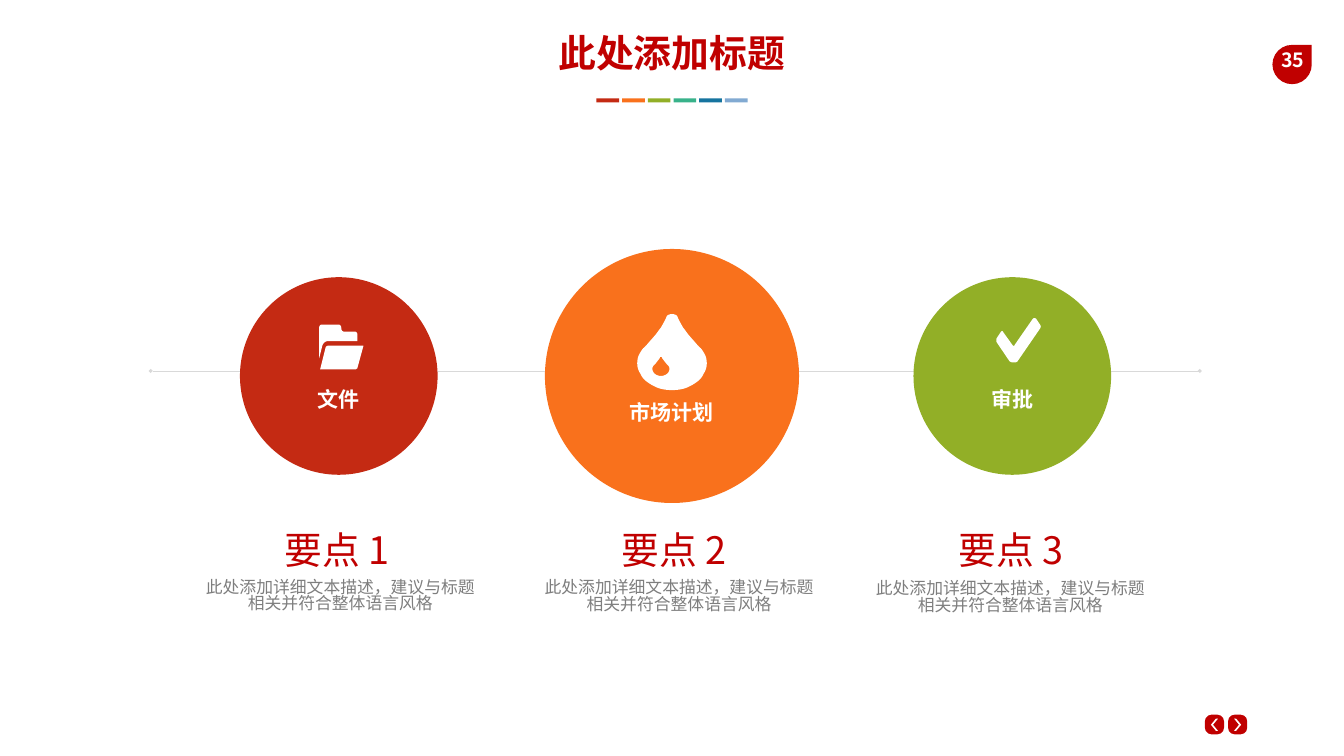
from pptx import Presentation
from pptx.dml.color import RGBColor as RGB
from pptx.enum.dml import MSO_LINE
from pptx.enum.shapes import MSO_CONNECTOR as Link, MSO_SHAPE as Shape
from pptx.enum.text import MSO_ANCHOR as Anchor, PP_ALIGN as Align
from pptx.oxml.ns import qn
from pptx.util import Inches, Pt
from lxml.etree import SubElement

FONT = "Noto Sans CJK SC"
RED, WHITE = RGB(0xC0, 0, 0), RGB(0xFF, 0xFF, 0xFF)
GREY, PALE = RGB(0x7E, 0x7E, 0x7E), RGB(0xD9, 0xD9, 0xD9)
BRICK, ORANGE, GREEN = RGB(0xC4, 0x2A, 0x13), RGB(0xF9, 0x71, 0x1C), RGB(0x92, 0xAF, 0x27)
TEAL, BLUE, SKY = RGB(0x38, 0xB2, 0x8A), RGB(0x16, 0x74, 0x9F), RGB(0x82, 0xAA, 0xD2)
STRIPES = [BRICK, ORANGE, GREEN, TEAL, BLUE, SKY]

WIDE, HIGH = 26.66, 15
MID = 7.46  # centre height of the circles
NOTE = "此处添加详细文本描述，建议与标题相关并符合整体语言风格"

# Icon outlines in inches: a start, then lines (2 numbers) and curves (6)
FOLDER = [
    [(.17, .33), (.14, .33, .12, .34, .10, .36), (.08, .38, .07, .40, .06, .43),
     (0, .67), (0, .07), (0, .03, .02, 0, .05, 0), (.38, 0),
     (.42, 0, .44, .03, .44, .07), (.44, .11, .46, .14, .50, .14), (.71, .14),
     (.74, .14, .76, .17, .76, .20), (.76, .33)],
    [(.88, .42), (.76, .86), (.76, .87, .73, .89, .72, .89), (.02, .89),
     (.13, .45), (.14, .43, .16, .42, .17, .42)],
]
CHECK = [
    [(.33, .88), (.30, .88, .28, .87, .26, .85), (.01, .48),
     (0, .46, 0, .42, .01, .40), (.09, .28), (.11, .25, .13, .25, .14, .28),
     (.32, .53), (.34, .56, .36, .56, .37, .53), (.73, .01),
     (.75, 0, .77, 0, .79, .01), (.87, .13), (.89, .16, .89, .18, .87, .21),
     (.43, .85), (.42, .87, .40, .88, .37, .88)],
]
# Right halves of the drop and its hole, mirrored when drawn
DROP = [(0, 0), (.03, 0, .11, .02, .11, .06), (.14, .13, .18, .20, .22, .27),
        (.27, .33, .31, .40, .36, .45), (.41, .51, .45, .55, .49, .60),
        (.53, .64, .56, .67, .58, .69), (.61, .73, .64, .78, .66, .82),
        (.68, .87, .69, .92, .69, .98), (.69, 1.05, .67, 1.12, .63, 1.18),
        (.60, 1.25, .55, 1.31, .49, 1.35), (.42, 1.40, .35, 1.44, .27, 1.47),
        (.18, 1.50, .10, 1.51, 0, 1.51)]
HOLE = [(0, .85), (.02, .85, .02, .85, .02, .87), (.04, .90, .08, .95, .12, 1),
        (.16, 1.03, .17, 1.06, .17, 1.09), (.17, 1.17, .09, 1.23, 0, 1.23)]

# Circle: label, fill, centre, size, label drop; then heading and note centres
POINTS = [
    ("文件", BRICK, 6.72, 3.92, .5, "要点 1", 6.68, 6.75, 11.38),
    ("市场计划", ORANGE, 13.33, 5.04, .75, "要点 2", 13.37, 13.47, 11.39),
    ("审批", GREEN, 20.08, 3.92, .5, "要点 3", 20.05, 20.04, 11.41),
]

deck = Presentation()
deck.slide_width, deck.slide_height = Inches(WIDE), Inches(HIGH)
slide = deck.slides.add_slide(deck.slide_layouts[6])
shapes = slide.shapes


def paint(item, fill):
    item.shadow.inherit = False
    item.fill.solid()
    item.fill.fore_color.rgb = fill
    item.line.fill.background()
    return item


def block(kind, x, y, w, h, fill, home=shapes):
    return paint(home.add_shape(kind, *map(Inches, (x, y, w, h))), fill)


def write(item, text, size, color, bold=False, pad=(.1, .05), gap=.9,
          anchor=Anchor.TOP, wrap=True):
    frame = item.text_frame
    frame.word_wrap, frame.vertical_anchor = wrap, anchor
    frame.margin_left = frame.margin_right = Inches(pad[0])
    frame.margin_top = frame.margin_bottom = Inches(pad[1])
    para = frame.paragraphs[0]
    para.alignment, para.line_spacing = Align.CENTER, gap
    run = para.add_run()
    run.text = text
    font = run.font
    font.size, font.bold, font.name = Pt(size), bold, FONT
    font.color.rgb = color
    SubElement(run._r.get_or_add_rPr(), qn("a:ea")).set("typeface", FONT)
    return frame


def label(x, y, w, h, *args, **opts):
    write(shapes.add_textbox(*map(Inches, (x, y, w, h))), *args, **opts)


def trace(outline, steps=6):
    """Turn lines and curves into a list of points."""
    dots = [outline[0]]
    for part in outline[1:]:
        if len(part) == 2:
            dots.append(part)
            continue
        ends = [dots[-1], part[:2], part[2:4], part[4:]]
        for n in range(1, steps + 1):
            t = n / steps
            u = 1 - t
            mix = (u ** 3, 3 * u * u * t, 3 * u * t * t, t ** 3)
            dots.append(tuple(sum(m * e[k] for m, e in zip(mix, ends)) for k in (0, 1)))
    return dots


def mirror(half, x):
    dots = trace(half)
    return [(x + a, b) for a, b in dots] + [(x - a, b) for a, b in dots[::-1]]


def icon(x, y, rings):
    rings = [[(Inches(x + a), Inches(y + b)) for a, b in ring] for ring in rings]
    pen = shapes.build_freeform(*rings[0][0])
    for n, ring in enumerate(rings):
        if n:
            pen.move_to(*ring[0])
        pen.add_line_segments(ring[1:], close=True)
    paint(pen.convert_to_shape(), WHITE)


# Page buttons
for x, turn in ((23.9, 180), (24.36, 0)):
    block(Shape.ROUNDED_RECTANGLE, x, 14.18, .38, .39, RED).adjustments[0] = .35
    arrow = block(Shape.CHEVRON, x + .12, 14.26, .14, .24, WHITE)
    arrow.adjustments[0], arrow.rotation = .7, turn

# Page number
block(Shape.TEAR, 25.24, .89, .78, .78, RED)
label(25.16, .9, .97, .67, "35", 28, WHITE, bold=True, pad=(.2, .1), wrap=False)

# Line behind the circles
axis = shapes.add_connector(Link.STRAIGHT, *map(Inches, (2.99, 7.36, 23.8, 7.36)))
axis.line.color.rgb, axis.line.width = PALE, Pt(.5)
axis.line.dash_style = MSO_LINE.ROUND_DOT
for end in ("a:headEnd", "a:tailEnd"):
    SubElement(axis.line._get_or_add_ln(), qn(end)).set("type", "diamond")
SubElement(axis._element.spPr, qn("a:effectLst"))

# Circles, headings and notes
for name, fill, x, size, drop, head, head_x, note_x, note_y in POINTS:
    disc = block(Shape.OVAL, x - size / 2, MID - size / 2, size, size, fill)
    frame = write(disc, name, 30, WHITE, bold=True, pad=(.2, .1), anchor=Anchor.MIDDLE)
    frame.margin_top = Inches(.1 + 2 * drop)
    label(head_x - 3.05, 10.38, 6.1, 1.17, head, 54, RED,
          pad=(.27, .13), anchor=Anchor.MIDDLE)
    label(note_x - 2.96, note_y, 5.92, 1.41, NOTE, 24, GREY, pad=(.27, .13), gap=.82)

# Icons
icon(6.33, 6.44, map(trace, FOLDER))
icon(12.64, 6.23, [mirror(DROP, .69), mirror(HOLE, .47)])
icon(19.76, 6.31, map(trace, CHECK))

# Title with its colour stripes
label(5.97, .65, 14.71, 1.01, "此处添加标题", 54, RED, bold=True)
band = shapes.add_group_shape().shapes
for n, fill in enumerate(STRIPES):
    block(Shape.RECTANGLE, 11.83 + .51 * n, 1.95, .45, .08, fill, band)

deck.save("out.pptx")
